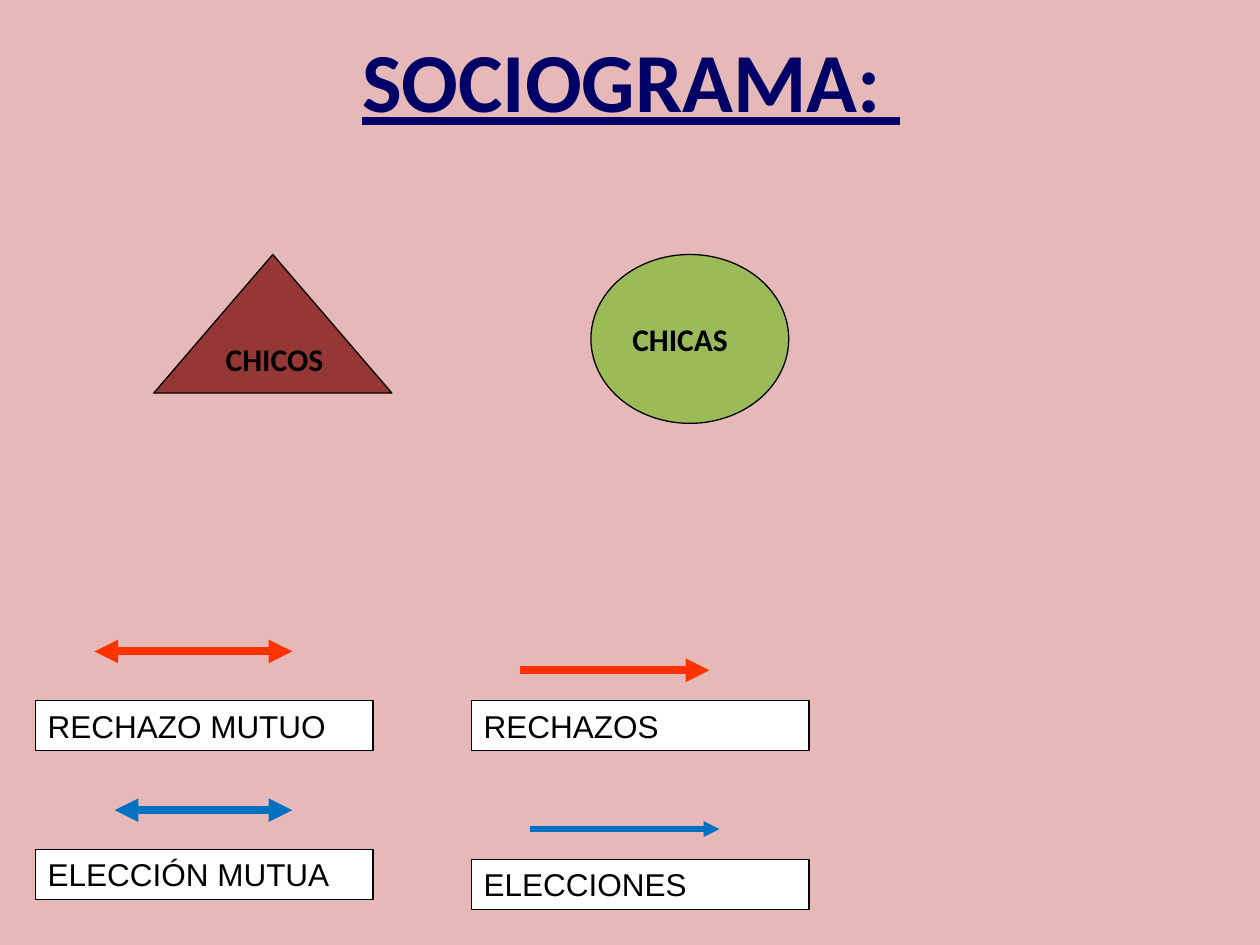
import pptx
import pptx.util
import pptx.dml.color
import pptx.enum.shapes
import pptx.enum.text
import pptx.oxml

Inches = pptx.util.Inches
Pt = pptx.util.Pt
RGBColor = pptx.dml.color.RGBColor
MSO_SHAPE = pptx.enum.shapes.MSO_SHAPE
MSO_ANCHOR = pptx.enum.text.MSO_ANCHOR
PP_ALIGN = pptx.enum.text.PP_ALIGN

PINK = RGBColor(0xE6, 0xB9, 0xB8)
NAVY = RGBColor(0x00, 0x00, 0x66)
MAROON = RGBColor(0x95, 0x37, 0x35)
GREEN = RGBColor(0x9B, 0xBB, 0x59)
RED = RGBColor(0xFF, 0x33, 0x00)
BLUE = RGBColor(0x00, 0x70, 0xC0)
WHITE = RGBColor(0xFF, 0xFF, 0xFF)
BLACK = RGBColor(0x00, 0x00, 0x00)

LABEL_WIDTH, LABEL_HEIGHT = 2.68, 0.4
LEFT_COLUMN, RIGHT_COLUMN = 0.28, 3.74


def set_font(p, name, size, color, bold=False):
    p.font.name = name
    p.font.size = Pt(size)
    p.font.color.rgb = color
    p.font.bold = bold


def add_title(s, text):
    sp = s.shapes.title
    sp.left, sp.top, sp.width, sp.height = Inches(0.51), 0, Inches(9), Inches(1.25)
    tf = sp.text_frame
    tf.text = text
    tf.vertical_anchor = MSO_ANCHOR.MIDDLE
    p = tf.paragraphs[0]
    p.alignment = PP_ALIGN.CENTER
    set_font(p, "Calibri", 48, NAVY, bold=True)
    p.font.underline = True


def add_outlined_shape(s, kind, left, top, width, height, fill, text):
    sp = s.shapes.add_shape(kind, Inches(left), Inches(top), Inches(width), Inches(height))
    sp.shadow.inherit = False
    sp.fill.solid()
    sp.fill.fore_color.rgb = fill
    sp.line.color.rgb = BLACK
    sp.line.width = Pt(0.75)
    tf = sp.text_frame
    tf.text = text
    tf.paragraphs[0].alignment = PP_ALIGN.LEFT
    return tf


def add_group_symbol(s, kind, left, top, width, height, fill, text):
    tf = add_outlined_shape(s, kind, left, top, width, height, fill, text)
    tf.word_wrap = False
    tf.vertical_anchor = MSO_ANCHOR.MIDDLE
    set_font(tf.paragraphs[0], "Calibri", 18, BLACK, bold=True)


def add_label(s, left, top, text):
    tf = add_outlined_shape(s, MSO_SHAPE.RECTANGLE, left, top, LABEL_WIDTH, LABEL_HEIGHT, WHITE, text)
    tf.word_wrap = True
    tf.auto_size = pptx.enum.text.MSO_AUTO_SIZE.SHAPE_TO_FIT_TEXT
    tf.vertical_anchor = MSO_ANCHOR.TOP
    set_font(tf.paragraphs[0], "Arial", 18, BLACK)


def add_arrow(s, x1, x2, y, color, width=4.5, mutual=False):
    """Draw a horizontal arrow, with a head at both ends when mutual."""
    line = s.shapes.add_connector(pptx.enum.shapes.MSO_CONNECTOR.STRAIGHT,
                                  Inches(x1), Inches(y), Inches(x2), Inches(y))
    line.line.color.rgb = color
    line.line.width = Pt(width)
    ln = line.line._get_or_add_ln()
    for end in ("headEnd", "tailEnd") if mutual else ("tailEnd",):
        pptx.oxml.ns  # namespace helpers
        ln.append(pptx.oxml.xmlchemy.OxmlElement(f"a:{end}"))
        ln[-1].set("type", "triangle")
    line._element.spPr.append(pptx.oxml.xmlchemy.OxmlElement("a:effectLst"))


def main():
    prs = pptx.Presentation()
    prs.slide_width, prs.slide_height = Inches(10), Inches(7.5)
    s = prs.slides.add_slide(prs.slide_layouts[5])
    s.background.fill.solid()
    s.background.fill.fore_color.rgb = PINK

    add_title(s, "SOCIOGRAMA: ")
    add_group_symbol(s, MSO_SHAPE.ISOSCELES_TRIANGLE, 1.22, 2.02, 1.89, 1.1, MAROON, "CHICOS")
    add_group_symbol(s, MSO_SHAPE.OVAL, 4.69, 2.02, 1.57, 1.34, GREEN, "CHICAS")

    add_arrow(s, 2.32, 0.91, 6.43, BLUE, mutual=True)
    add_arrow(s, 0.75, 2.32, 5.17, RED, mutual=True)
    add_arrow(s, 4.13, 5.63, 5.32, RED)
    add_arrow(s, 4.21, 5.71, 6.58, BLUE, width=3)

    for left, top, text in (
        (LEFT_COLUMN, 5.56, "RECHAZO MUTUO"),
        (LEFT_COLUMN, 6.74, "ELECCIÓN MUTUA"),
        (RIGHT_COLUMN, 5.56, "RECHAZOS"),
        (RIGHT_COLUMN, 6.82, "ELECCIONES"),
    ):
        add_label(s, left, top, text)

    prs.save("out.pptx")


if __name__ == "__main__":
    main()
